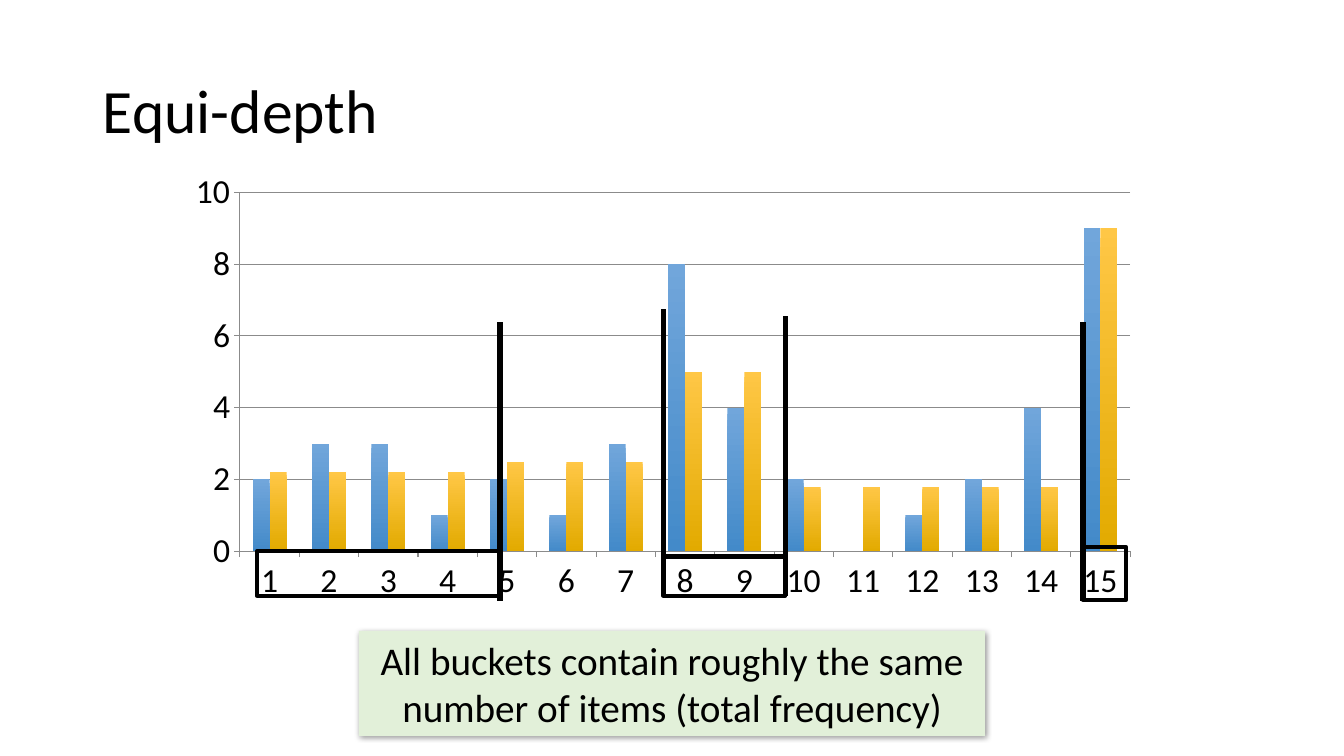
from dataclasses import dataclass
from lxml import etree
from pptx import Presentation
from pptx.chart.data import CategoryChartData as ChartData
from pptx.dml.color import RGBColor as RGB
from pptx.enum.chart import XL_CHART_TYPE as Chart, XL_TICK_MARK as Tick
from pptx.enum.shapes import MSO_CONNECTOR as Link, MSO_SHAPE as Shape
from pptx.enum.text import MSO_ANCHOR as Anchor, PP_ALIGN as Align
from pptx.oxml import parse_xml
from pptx.oxml.ns import nsdecls, qn
from pptx.util import Inches, Pt

TITLE = "Equi-depth"
NOTE = "All buckets contain roughly the same number of items (total frequency)"
COUNTS = [2, 3, 3, 1, 2, 1, 3, 8, 4, 2, 0, 1, 2, 4, 9]
# (items in the bucket, mean count)
BUCKETS = [(4, 2.2), (3, 2.5), (2, 5), (5, 1.8), (1, 9)]
# left, top, width, height in inches
HEAD = (0.92, 0.4, 11.5, 1.45)
FRAME = (1.75, 1.61, 9.66, 4.45)
PLOT = (2.38, 1.91, 8.83, 3.56)
CARD = (3.56, 6.26, 6.21, 1.04)
BOXES = [(2.55, 5.47, 2.41, 0.44), (6.58, 5.52, 1.21, 0.39),
         (10.74, 5.43, 0.43, 0.52)]
# x, bottom, top in inches
CUTS = [(6.58, 5.83, 3.07), (7.79, 5.91, 3.14),
        (4.96, 5.96, 3.19), (10.74, 5.96, 3.19)]


@dataclass
class Theme:
    font: str = "Calibri"
    ink: str = "000000"
    grid: str = "8B8B8B"
    card: str = "E2F0D9"
    bars: tuple = (("71A6DB", "438AC9"), ("FFC746", "E2AA00"))
    head: int = 44
    note: int = 28
    axis: int = 24
    box: int = 3
    cut: int = 4


theme = Theme()


def color(code):
    return RGB.from_string(code)


def place(box):
    return [Inches(v) for v in box]


def style(font, size):
    font.name, font.size = theme.font, Pt(size)
    font.color.rgb = color(theme.ink)


def write(frame, text, size, align):
    frame.word_wrap = True
    frame.vertical_anchor = Anchor.MIDDLE
    para = frame.paragraphs[0]
    para.alignment = align
    run = para.add_run()
    run.text = text
    style(run.font, size)
    return para


def stroke(line, size, code=theme.ink):
    line.color.rgb = color(code)
    line.width = Pt(size)


def fix_plot(chart):
    """Pin the inner plot area to PLOT, as shares of FRAME."""
    area = chart.plots[0]._element.getparent()
    old = area.find(qn("c:layout"))
    if old is not None:
        area.remove(old)
    layout = parse_xml(f"<c:layout {nsdecls('c')}><c:manualLayout/></c:layout>")
    area.insert(0, layout)
    x, y, w, h = PLOT
    left, top, wide, high = FRAME
    rules = [("layoutTarget", "inner"), ("xMode", "edge"), ("yMode", "edge"),
             ("x", (x - left) / wide), ("y", (y - top) / high),
             ("w", w / wide), ("h", h / high)]
    for name, val in rules:
        node = etree.SubElement(layout[0], qn(f"c:{name}"))
        node.set("val", val if isinstance(val, str) else f"{val:.4f}")


def add_bars(slide):
    data = ChartData()
    data.categories = [str(n + 1) for n in range(len(COUNTS))]
    data.add_series("Series 1", COUNTS)
    data.add_series("Series 2", [m for n, m in BUCKETS for _ in range(n)])
    chart = slide.shapes.add_chart(
        Chart.COLUMN_CLUSTERED, *place(FRAME), data).chart
    chart.has_legend = chart.has_title = False
    style(chart.font, theme.axis)
    plot = chart.plots[0]
    plot.gap_width, plot.overlap, plot.vary_by_categories = 150, 0, False
    for series, tones in zip(plot.series, theme.bars):
        fill = series.format.fill
        fill.gradient()
        fill.gradient_angle = 270
        for stop, tone in zip(fill.gradient_stops, tones):
            stop.color.rgb = color(tone)
    for axis in (chart.category_axis, chart.value_axis):
        axis.major_tick_mark, axis.minor_tick_mark = Tick.OUTSIDE, Tick.NONE
        stroke(axis.format.line, 0.75, theme.grid)
    axis = chart.value_axis
    axis.minimum_scale, axis.maximum_scale, axis.major_unit = 0, 10, 2
    axis.has_major_gridlines = True
    stroke(axis.major_gridlines.format.line, 0.75, theme.grid)
    fix_plot(chart)


def add_box(slide, box):
    shape = slide.shapes.add_shape(Shape.RECTANGLE, *place(box))
    shape.shadow.inherit = False
    shape.fill.background()
    stroke(shape.line, theme.box)


def add_cut(slide, cut):
    x, low, high = cut
    line = slide.shapes.add_connector(
        Link.STRAIGHT, *place((x, low, x, high)))
    stroke(line.line, theme.cut)
    etree.SubElement(line._element.spPr, qn("a:effectLst"))


def add_note(slide):
    card = slide.shapes.add_shape(Shape.RECTANGLE, *place(CARD))
    card.fill.solid()
    card.fill.fore_color.rgb = color(theme.card)
    card.line.fill.background()
    card._element.spPr.append(parse_xml(
        f'<a:effectLst {nsdecls("a")}><a:outerShdw blurRad="{Pt(4)}" '
        f'dist="{Pt(1)}" dir="2700000" algn="tl" rotWithShape="0">'
        f'<a:srgbClr val="{theme.ink}"><a:alpha val="40000"/></a:srgbClr>'
        '</a:outerShdw></a:effectLst>'))
    write(card.text_frame, NOTE, theme.note, Align.CENTER)


def main():
    deck = Presentation()
    deck.slide_width, deck.slide_height = Inches(13.33), Inches(7.5)
    slide = deck.slides.add_slide(deck.slide_layouts[5])
    head = slide.shapes.title
    head.left, head.top, head.width, head.height = place(HEAD)
    write(head.text_frame, TITLE, theme.head, Align.LEFT).line_spacing = 0.9
    add_bars(slide)
    for box in BOXES:
        add_box(slide, box)
    for cut in CUTS:
        add_cut(slide, cut)
    add_note(slide)
    deck.save("out.pptx")


if __name__ == "__main__":
    main()
